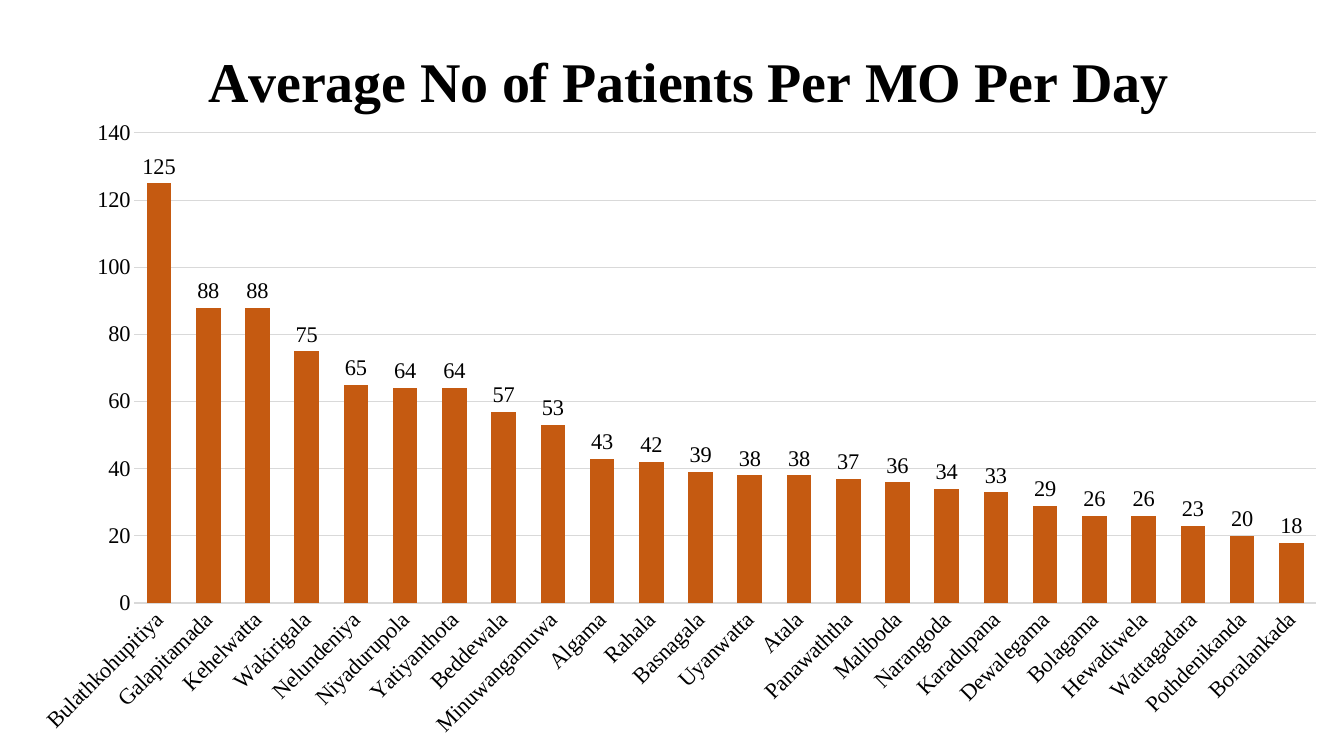
from typing import NamedTuple

from lxml import etree
from pptx import Presentation
from pptx.chart import data as cd
from pptx.dml.color import RGBColor
from pptx.enum import chart as ce
from pptx.oxml.ns import qn
from pptx.util import Cm, Pt

COLORS = {"bar": "C55A11", "text": "000000", "grid": "D9D9D9"}
FONT = "Times New Roman"


class Hospital(NamedTuple):
    name: str
    patients: int


HOSPITALS = [
    Hospital("Bulathkohupitiya", 125),
    Hospital("Galapitamada", 88),
    Hospital("Kehelwatta", 88),
    Hospital("Wakirigala", 75),
    Hospital("Nelundeniya", 65),
    Hospital("Niyadurupola", 64),
    Hospital("Yatiyanthota", 64),
    Hospital("Beddewala", 57),
    Hospital("Minuwangamuwa", 53),
    Hospital("Algama", 43),
    Hospital("Rahala", 42),
    Hospital("Basnagala", 39),
    Hospital("Uyanwatta", 38),
    Hospital("Atala", 38),
    Hospital("Panawaththa", 37),
    Hospital("Maliboda", 36),
    Hospital("Narangoda", 34),
    Hospital("Karadupana", 33),
    Hospital("Dewalegama", 29),
    Hospital("Bolagama", 26),
    Hospital("Hewadiwela", 26),
    Hospital("Wattagadara", 23),
    Hospital("Pothdenikanda", 20),
    Hospital("Boralankada", 18),
]


def rgb(name: str) -> RGBColor:
    return RGBColor.from_string(COLORS[name])


def style_font(font, size: int, bold: bool = False) -> None:
    font.name, font.size, font.bold = FONT, Pt(size), bold
    font.color.rgb = rgb("text")


def style_line(line, width: float) -> None:
    line.color.rgb = rgb("grid")
    line.width = Pt(width)


def set_layout(parent, index: int, **settings) -> None:
    """Place a chart part by hand, in fractions of the chart's size."""
    for old in parent.findall(qn("c:layout")):
        parent.remove(old)
    layout = etree.Element(qn("c:layout"))
    manual = etree.SubElement(layout, qn("c:manualLayout"))
    for tag, value in settings.items():
        etree.SubElement(manual, qn(f"c:{tag}")).set("val", str(value))
    parent.insert(index, layout)


def add_title(chart) -> None:
    chart.has_title = True
    title = chart.chart_title
    title.include_in_layout = False
    p = title.text_frame.paragraphs[0]
    p.text = "Average No of Patients Per MO Per Day"
    style_font(p.runs[0].font, 40, bold=True)
    set_layout(title._element, 1, xMode="edge", yMode="edge", x=0.14, y=0.03)


def style_axes(chart) -> None:
    cat, val = chart.category_axis, chart.value_axis
    for axis in (cat, val):
        axis.major_tick_mark = axis.minor_tick_mark = ce.XL_TICK_MARK.NONE
        style_font(axis.tick_labels.font, 16)
    style_line(cat.format.line, 1)
    cat._element.find(qn("c:txPr")).find(qn("a:bodyPr")).set("rot", "-2700000")
    val.minimum_scale, val.maximum_scale, val.major_unit = 0, 140, 20
    val.format.line.fill.background()
    val.has_major_gridlines = True
    style_line(val.major_gridlines.format.line, 0.75)


def style_bars(plot) -> None:
    plot.gap_width, plot.overlap = 100, -24
    plot.vary_by_categories = False
    fill = plot.series[0].format.fill
    fill.solid()
    fill.fore_color.rgb = rgb("bar")
    plot.has_data_labels = True
    labels = plot.data_labels
    labels.show_value = True
    labels.position = ce.XL_LABEL_POSITION.OUTSIDE_END
    style_font(labels.font, 16)


def main() -> None:
    prs = Presentation()
    prs.slide_width, prs.slide_height = Cm(33.87), Cm(19.05)
    s = prs.slides.add_slide(prs.slide_layouts[6])

    data = cd.CategoryChartData()
    data.categories = [h.name for h in HOSPITALS]
    data.add_series("Series 1", [h.patients for h in HOSPITALS])
    chart = s.shapes.add_chart(
        ce.XL_CHART_TYPE.COLUMN_CLUSTERED,
        Cm(0.3), Cm(0.36), Cm(33.57), Cm(18.69), data,
    ).chart
    chart.has_legend = False
    style_font(chart.font, 16)
    add_title(chart)
    style_axes(chart)
    style_bars(chart.plots[0])
    plot_area = chart._chartSpace.find(f".//{qn('c:plotArea')}")
    set_layout(plot_area, 0, layoutTarget="inner", xMode="edge", yMode="edge",
               x=0.092, y=0.16, w=0.887, h=0.634)
    prs.save("out.pptx")


if __name__ == "__main__":
    main()
